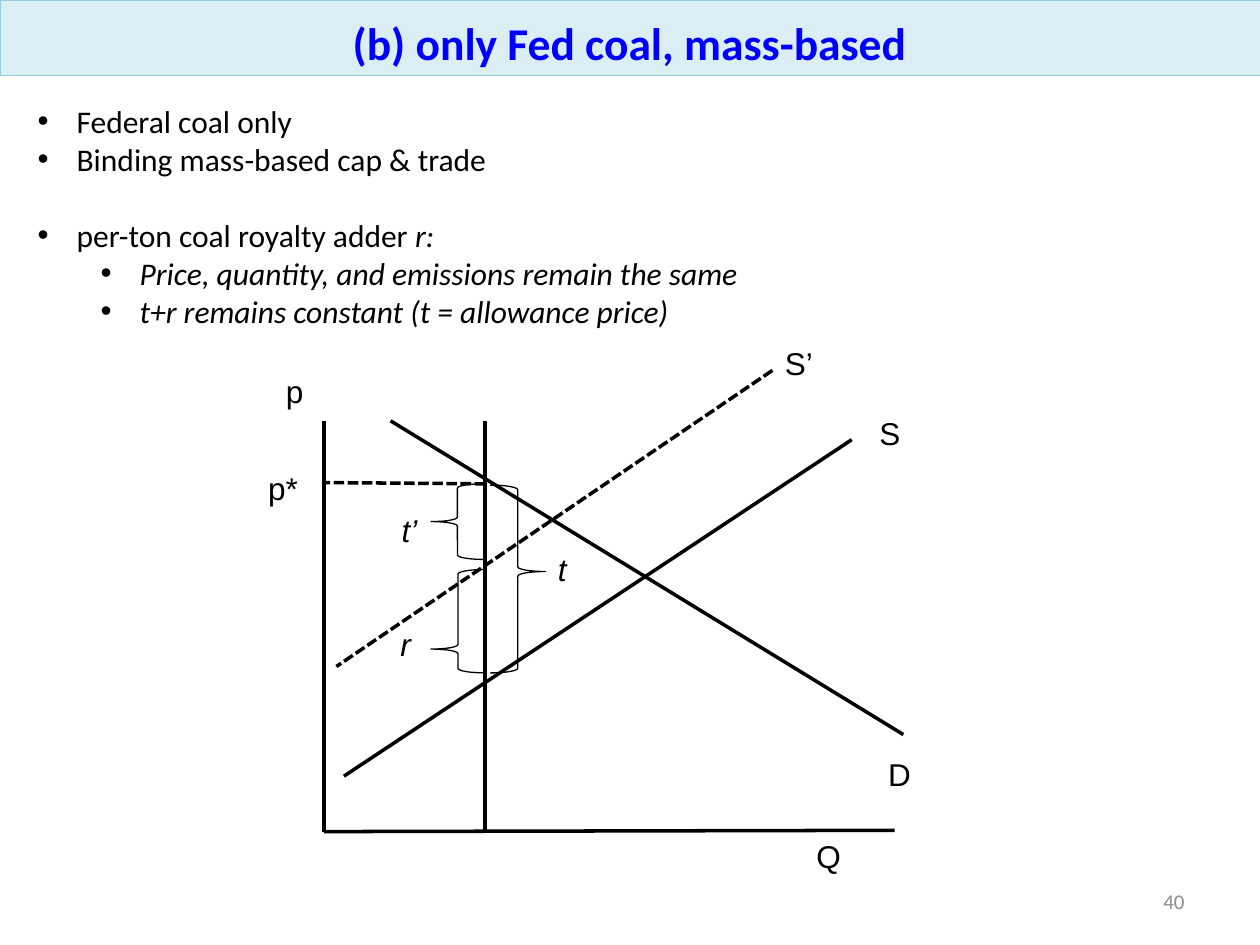
from pptx import Presentation
from pptx.dml.color import RGBColor as RGB
from pptx.enum.dml import MSO_LINE as Dash
from pptx.enum.shapes import MSO_CONNECTOR as Link, MSO_SHAPE as Form
from pptx.enum.text import MSO_ANCHOR as Anchor, MSO_AUTO_SIZE as Fit, PP_ALIGN as Align
from pptx.oxml.ns import qn
from pptx.util import Inches, Pt
from lxml.etree import SubElement as Sub


class Theme:
    ink = RGB(0, 0, 0)
    gray = RGB(0x8C, 0x8C, 0x8C)
    blue = RGB(0, 0, 0xFF)
    band = RGB(0xDB, 0xEE, 0xF4)
    edge = RGB(0x93, 0xCD, 0xDD)
    body, label = "Calibri", "Arial"
    head, text, small = Pt(26), Pt(18), Pt(12)
    thick, thin, hair = Pt(2), Pt(0.75), Pt(0.25)


class Deck:
    def __init__(self, theme):
        self.theme = theme
        self.file = Presentation()
        self.file.slide_width, self.file.slide_height = Inches(10), Inches(7.5)
        self.slide = self.file.slides.add_slide(self.file.slide_layouts[5])
        self.shapes = self.slide.shapes

    def style(self, para, name, size, color, bold=False, italic=False):
        font = para.font
        font.name, font.size, font.color.rgb = name, size, color
        font.bold, font.italic = bold, italic

    def title(self, text, box):
        t, shape = self.theme, self.shapes.title
        shape.left, shape.top, shape.width, shape.height = map(Inches, box)
        shape.fill.solid()
        shape.fill.fore_color.rgb = t.band
        shape.line.color.rgb, shape.line.width = t.edge, t.hair
        frame = shape.text_frame
        frame.text = text
        frame.auto_size, frame.vertical_anchor = Fit.NONE, Anchor.BOTTOM
        para = frame.paragraphs[0]
        para.alignment = Align.CENTER
        self.style(para, t.body, t.head, t.blue, bold=True)

    def text(self, box, text="", wrap=False, italic=False):
        t = self.theme
        frame = self.shapes.add_textbox(*map(Inches, box)).text_frame
        frame.word_wrap = wrap
        para = frame.paragraphs[0]
        para.text = text
        self.style(para, t.label, t.text, t.ink, italic=italic)
        return frame

    def bullets(self, box, items):
        t = self.theme
        frame = self.text(box, wrap=True)
        for i, (level, gap, runs) in enumerate(items):
            para = frame.add_paragraph() if i else frame.paragraphs[0]
            para.level, para.space_before = level, Pt(gap)
            self.style(para, t.body, t.text, t.ink)
            for words, slant in runs:
                run = para.add_run()
                run.text, run.font.italic = words, slant
            props = para._p.get_or_add_pPr()
            props.set("marL", str(Inches(0.31 + 0.5 * level)))
            props.set("indent", str(Inches(-0.31)))
            # Bullet marks must come before the default run style
            last = props.find(qn("a:defRPr"))
            for tag, key, value in (("a:buFont", "typeface", t.label),
                                    ("a:buChar", "char", "•")):
                mark = Sub(props, qn(tag))
                mark.set(key, value)
                if last is not None:
                    last.addprevious(mark)

    def line(self, start, end, dash=False):
        link = self.shapes.add_connector(Link.STRAIGHT, *map(Inches, start + end))
        link.line.color.rgb, link.line.width = self.theme.ink, self.theme.thick
        if dash:
            link.line.dash_style = Dash.SQUARE_DOT
        Sub(link._element.spPr, qn("a:effectLst"))

    def brace(self, box, point=0.5, turn=0):
        shape = self.shapes.add_shape(Form.LEFT_BRACE, *map(Inches, box))
        shape.adjustments[0], shape.adjustments[1] = 0.083, point
        shape.rotation = turn
        shape.shadow.inherit = False
        shape.fill.background()
        shape.line.color.rgb, shape.line.width = self.theme.ink, self.theme.thin

    def number(self, box, text):
        t = self.theme
        frame = self.text(box, text, wrap=True)
        frame.vertical_anchor = Anchor.MIDDLE
        para = frame.paragraphs[0]
        para.alignment = Align.RIGHT
        self.style(para, t.body, t.small, t.gray)


def main():
    deck = Deck(Theme())
    deck.title("(b) only Fed coal, mass-based", (0, 0, 10, 0.6))
    deck.number((7.17, 6.95, 2.33, 0.4), "40")

    # Key points: level, space before, (words, italic)
    deck.bullets((0.2, 0.76, 7.95, 1.92), [
        (0, 0, [("Federal coal only", False)]),
        (0, 0, [("Binding mass-based cap & trade", False)]),
        (0, 22, [("per-ton coal royalty adder ", False), ("r:", True)]),
        (1, 0, [("Price, quantity, and emissions remain the same", True)]),
        (1, 0, [("t+r remains constant (t = allowance price)", True)]),
    ])

    # Axes and cap
    left, cap, top, base = 2.57, 3.85, 3.34, 6.6
    deck.line((left, top), (left, base))
    deck.line((7.1, 6.59), (left, base))
    deck.line((cap, top), (cap, base))

    # Demand, supply, supply with royalty, price level
    deck.line((7.17, 5.83), (3.1, top))
    deck.line((6.76, 3.49), (2.73, 6.16))
    deck.line((6.13, 2.94), (2.67, 5.29), dash=True)
    deck.line((cap, 3.84), (left, 3.83), dash=True)

    # Braces for t’, r and t
    deck.brace((3.42, 3.84, 0.42, 0.6))
    deck.brace((3.42, 4.52, 0.43, 0.82), point=0.77)
    deck.brace((3.89, 3.85, 0.44, 1.49), point=0.54, turn=180)

    # Labels
    for words, x, y, wide, slant in (
            ("p", 2.17, 2.9, 0.38, False), ("p*", 2.03, 3.67, 0.49, False),
            ("Q", 6.38, 6.59, 0.45, False), ("D", 6.95, 5.94, 0.43, False),
            ("S", 6.88, 3.24, 0.41, False), ("S’", 6.13, 2.68, 0.48, False),
            ("t’", 3.09, 4.01, 0.33, True), ("r", 3.08, 4.91, 0.32, True),
            ("t", 4.33, 4.32, 0.27, True)):
        deck.text((x, y, wide, 0.43), words, italic=slant)

    deck.file.save("out.pptx")


if __name__ == "__main__":
    main()
